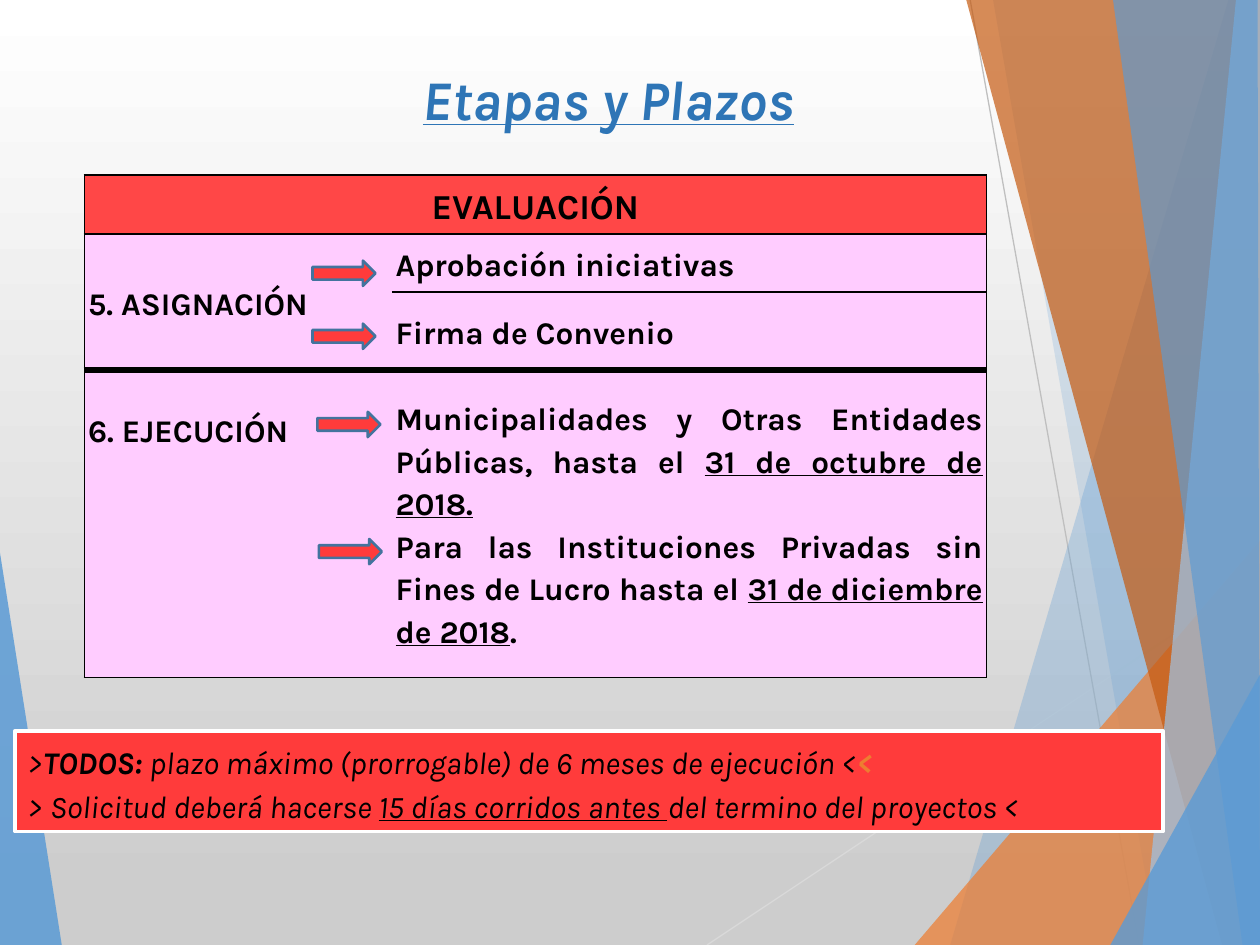
from lxml import etree
from pptx import Presentation, util as u
from pptx.dml.color import RGBColor
from pptx.enum import shapes, text
from pptx.oxml.ns import qn

Pt = u.Pt
BLACK = RGBColor(0x00, 0x00, 0x00)
WHITE = RGBColor(0xFF, 0xFF, 0xFF)
GREY = RGBColor(0xCD, 0xCD, 0xCD)
LIGHT_LINE = RGBColor(0xD9, 0xD9, 0xD9)
DARK_LINE = RGBColor(0xBF, 0xBF, 0xBF)
BLUE = RGBColor(0x5B, 0x9B, 0xD5)
PALE_BLUE = RGBColor(0x9D, 0xC3, 0xE6)
TITLE_BLUE = RGBColor(0x2E, 0x75, 0xB6)
ARROW_LINE = RGBColor(0x43, 0x73, 0x9E)
ORANGE = RGBColor(0xED, 0x7D, 0x31)
RUST = RGBColor(0xC5, 0x5A, 0x11)
RED = RGBColor(0xFF, 0x3B, 0x3B)
HEADER_RED = RGBColor(0xFF, 0x47, 0x47)
PINK = RGBColor(0xFF, 0xCC, 0xFF)


def write(tf, paragraphs, size, align, spacing=1.15, color=BLACK):
    """Fill tf with paragraphs of (text, styles) runs; styles holds b, i, u, o (orange)."""
    for n, runs in enumerate(paragraphs):
        p = tf.add_paragraph() if n else tf.paragraphs[0]
        p.alignment = align
        p.line_spacing = spacing
        for words, styles in runs:
            r = p.add_run()
            r.text = words
            r.font.name = "Karla"
            r.font.size = Pt(size)
            r.font.bold = "b" in styles
            r.font.italic = "i" in styles
            r.font.underline = "u" in styles
            r.font.color.rgb = ORANGE if "o" in styles else color


def set_borders(cell, **widths):
    """Draw black borders of the given widths; sides not named get no line."""
    tc_pr = cell._tc.get_or_add_tcPr()
    for side in "LRTB":
        width = widths.get(side, 0)
        ln = etree.SubElement(tc_pr, qn(f"a:ln{side}"), w=str(Pt(width)))
        if width:
            fill = etree.SubElement(ln, qn("a:solidFill"))
            etree.SubElement(fill, qn("a:srgbClr"), val=str(BLACK))
        else:
            etree.SubElement(ln, qn("a:noFill"))


prs = Presentation()
prs.slide_width, prs.slide_height = Pt(720), Pt(540)
s = prs.slides.add_slide(prs.slide_layouts[6])

bg = s.background.fill
bg.gradient()
bg.gradient_angle = 270
for stop, color, position in zip(bg.gradient_stops, (WHITE, GREY), (0, 0.94)):
    stop.color.rgb = color
    stop.position = position

# Background facets: colour, opacity in percent, corners
facets = [
    (BLUE, 85, [(0, 316), (35.3, 540), (0, 540)]),
    (BLUE, 30, [(702, 0), (543, 540), (720, 540), (720, 0)]),
    (BLUE, 20, [(567.5, 0), (661.5, 540), (720, 540), (720, 0)]),
    (ORANGE, 72, [(522.7, 540), (720, 309), (720, 540)]),
    (RUST, 70, [(552.2, 0), (698.4, 540), (720, 540), (720, 0)]),
    (PALE_BLUE, 70, [(706.3, 0), (653, 540), (720, 540), (720, 0)]),
    (BLUE, 65, [(636, 0), (710, 540), (720, 540), (718.6, 0)]),
    (BLUE, 80, [(634.5, 540), (720, 385.5), (720, 540)]),
]
rays = [(LIGHT_LINE, 404, 540, 720, 329.5), (DARK_LINE, 554.4, 0, 650.9, 540)]

for n, (color, opacity, corners) in enumerate(facets):
    points = [(Pt(x), Pt(y)) for x, y in corners]
    builder = s.shapes.build_freeform(*points[0])
    builder.add_line_segments(points[1:])
    sp = builder.convert_to_shape()
    sp.shadow.inherit = False
    sp.fill.solid()
    sp.fill.fore_color.rgb = color
    sp.line.fill.background()
    clr = sp.fill._xPr.find(qn("a:solidFill"))[0]
    etree.SubElement(clr, qn("a:alpha"), val=str(opacity * 1000))
    if n == 0:
        for ray_color, *ends in rays:
            ray = s.shapes.add_connector(shapes.MSO_CONNECTOR.STRAIGHT, *map(Pt, ends))
            ray.line.color.rgb = ray_color
            ray.line.width = Pt(0.75)
            etree.SubElement(ray._element.spPr, qn("a:effectLst"))

title = s.shapes.add_textbox(Pt(67), Pt(37.5), Pt(561.5), Pt(42.5))
tf = title.text_frame
tf.word_wrap = True
tf.vertical_anchor = text.MSO_ANCHOR.MIDDLE
write(tf, [[("Etapas y Plazos", "biu")]], 32, text.PP_ALIGN.CENTER, 0.9, TITLE_BLUE)

table = s.shapes.add_table(4, 2, Pt(48.2), Pt(100), Pt(515.5), Pt(287.3)).table
table.first_row = table.horz_banding = False
for col, width in zip(table.columns, (175.7, 339.8)):
    col.width = Pt(width)
for row, height in zip(table.rows, (33.8, 33.1, 44.6, 175.8)):
    row.height = Pt(height)
table.cell(0, 0).merge(table.cell(0, 1))
table.cell(1, 0).merge(table.cell(2, 0))

stage_borders = [
    (dict(L=1, R=1, T=1, B=1), dict(R=1, T=1, B=1)),
    (dict(L=1, T=1, B=4), dict(R=1, T=1, B=1)),
    (dict(L=1, B=4), dict(R=1, T=1, B=4)),
    (dict(L=1, T=4, B=1), dict(R=1, T=4, B=1)),
]
for i, borders in enumerate(stage_borders):
    for j, sides in enumerate(borders):
        cell = table.cell(i, j)
        set_borders(cell, **sides)
        cell.fill.solid()
        cell.fill.fore_color.rgb = PINK if i else HEADER_RED
        cell.margin_left = cell.margin_right = Pt(2.2)
        cell.margin_top = cell.margin_bottom = 0
        cell.vertical_anchor = text.MSO_ANCHOR.MIDDLE

LEFT, JUSTIFY = text.PP_ALIGN.LEFT, text.PP_ALIGN.JUSTIFY
write(table.cell(0, 0).text_frame, [[("EVALUACIÓN", "b")]], 20, text.PP_ALIGN.CENTER)
write(table.cell(1, 0).text_frame, [[("5. ASIGNACIÓN", "b")]], 18, LEFT)
write(table.cell(1, 1).text_frame, [[("Aprobación iniciativas", "b")]], 18, JUSTIFY)
write(table.cell(2, 1).text_frame, [[("Firma de Convenio", "b")]], 18, JUSTIFY)
execution = table.cell(3, 0)
execution.vertical_anchor = text.MSO_ANCHOR.TOP
execution.margin_top = Pt(21.5)
write(execution.text_frame, [[("6. EJECUCIÓN", "b")]], 18, LEFT)
write(table.cell(3, 1).text_frame, [
    [("Municipalidades y Otras Entidades Públicas, hasta el ", "b"),
     ("31 de octubre de 2018.", "bu")],
    [("Para las Instituciones Privadas sin Fines de Lucro hasta el ", "b"),
     ("31 de diciembre de 2018", "bu"), (".", "b")],
], 18, JUSTIFY)

RECT, ARROW = shapes.MSO_SHAPE.RECTANGLE, shapes.MSO_SHAPE.RIGHT_ARROW
red_shapes = [(ARROW, x, y, 36, 14.4, ARROW_LINE, 1.5)
              for x, y in ((178.6, 149), (178.6, 185), (181.4, 235.4), (182.2, 308))]
red_shapes.append((RECT, 8.6, 417.6, 656, 57.6, WHITE, 2))
for kind, x, y, w, h, line_color, line_width in red_shapes:
    sp = s.shapes.add_shape(kind, Pt(x), Pt(y), Pt(w), Pt(h))
    sp.shadow.inherit = False
    sp.fill.solid()
    sp.fill.fore_color.rgb = RED
    sp.line.color.rgb = line_color
    sp.line.width = Pt(line_width)

# The banner is the last red shape
tf = sp.text_frame
tf.word_wrap = True
tf.vertical_anchor = text.MSO_ANCHOR.MIDDLE
write(tf, [
    [(">", "i"), ("TODOS: ", "bi"),
     ("plazo máximo (prorrogable) de 6 meses de ejecución <", "i"), ("<", "bio")],
    [("> Solicitud deberá hacerse ", "i"), ("15 días corridos antes ", "iu"),
     ("del termino del proyectos <", "i")],
], 18, JUSTIFY)

prs.save("out.pptx")
